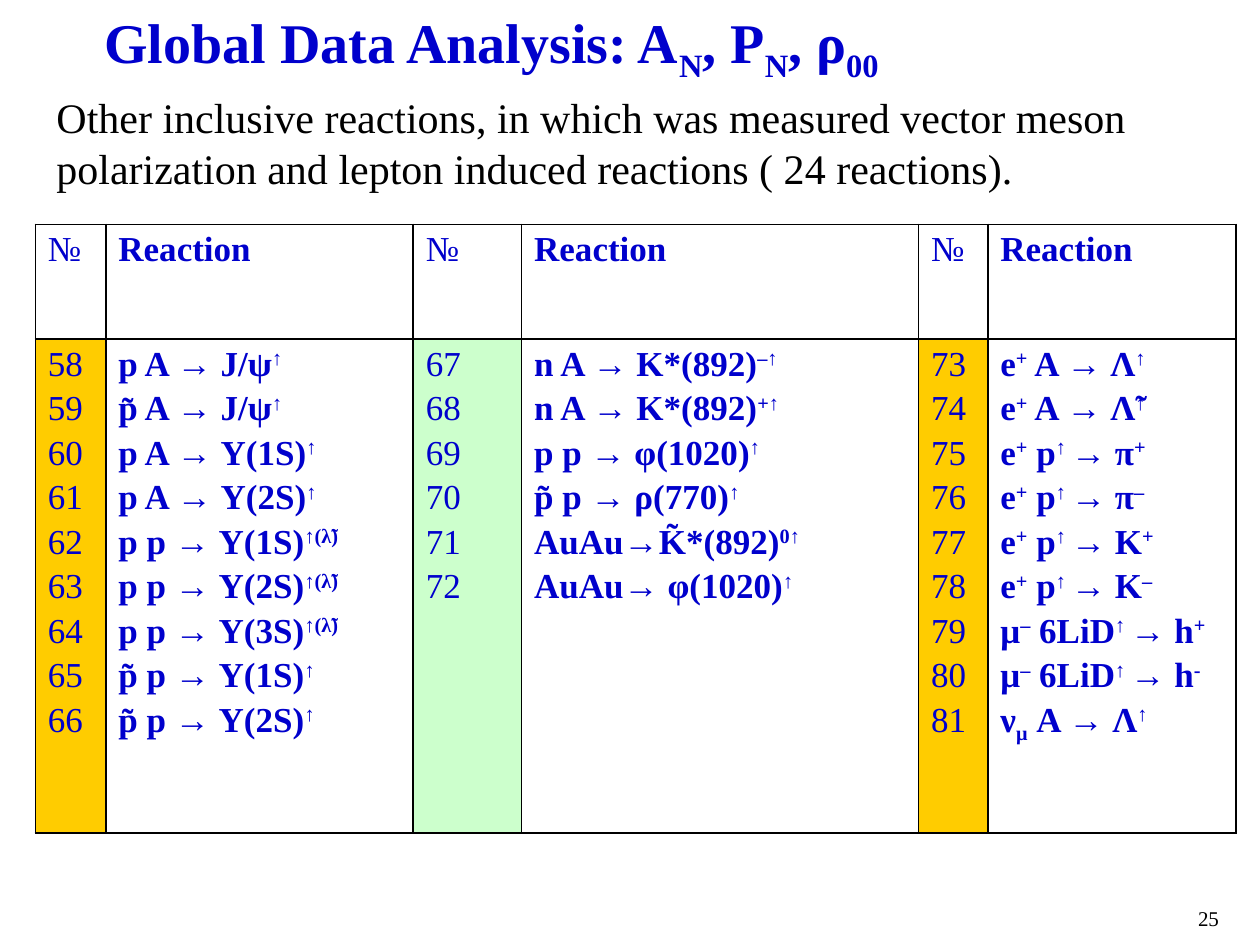
from dataclasses import dataclass
from typing import Any

from lxml.etree import SubElement
from pptx import Presentation
from pptx.dml.color import RGBColor
from pptx.enum.text import MSO_ANCHOR as Anchor
from pptx.oxml.ns import qn
from pptx.util import Inches, Pt

BLUE, BLACK, WHITE = "0000CC", "000000", "FFFFFF"
GOLD, MINT = "FFCC00", "CCFFCC"
SHIFTS = {"^": "30000", "_": "-25000"}


def color(code):
    return RGBColor.from_string(code)


@dataclass
class SlideBuilder:
    """Draws on a page with a grid of 100 columns by 75 rows; |^ raises and |_ lowers a span."""

    page: Any
    unit: int
    face: str = "Times New Roman"

    def length(self, units):
        return round(units * self.unit)

    def style(self, font, size, ink, bold):
        font.name, font.size, font.bold = self.face, Pt(size), bold
        font.color.rgb = color(ink)

    def lines(self, frame, lines, size, ink, bold=False, gap=0):
        for index, line in enumerate(lines):
            para = frame.add_paragraph() if index else frame.paragraphs[0]
            para.space_before = Pt(gap)
            self.style(para.font, size, ink, bold)
            for piece in line.split("|"):
                shift = SHIFTS.get(piece[:1])
                span = para.add_run()
                span.text = piece[1:] if shift else piece
                if shift:
                    span.font._element.set("baseline", shift)

    def text(self, place, line, size, ink=BLACK, bold=False, anchor=Anchor.TOP, fill=None):
        box = self.page.shapes.add_textbox(*map(self.length, place))
        if fill:
            box.fill.solid()
            box.fill.fore_color.rgb = color(fill)
        frame = box.text_frame
        frame.word_wrap, frame.vertical_anchor = True, anchor
        self.lines(frame, [line], size, ink, bold)

    def border(self, cell, ink=BLACK, width=1):
        properties = cell._tc.get_or_add_tcPr()
        for side in ("a:lnL", "a:lnR", "a:lnT", "a:lnB"):
            line = SubElement(properties, qn(side), w=str(Pt(width)))
            SubElement(SubElement(line, qn("a:solidFill")), qn("a:srgbClr"), val=ink)

    def table(self, left, top, widths, heights, rows, fills, size=20, gap=3.2):
        place = map(self.length, (left, top, sum(widths), sum(heights)))
        table = self.page.shapes.add_table(len(heights), len(widths), *place).table
        table.first_row = table.horz_banding = False
        for column, width in zip(table.columns, widths):
            column.width = self.length(width)
        for r, (height, row) in enumerate(zip(heights, rows)):
            table.rows[r].height = self.length(height)
            for c, lines in enumerate(row):
                cell = table.cell(r, c)
                self.border(cell)
                if r and fills[c]:
                    cell.fill.solid()
                    cell.fill.fore_color.rgb = color(fills[c])
                else:
                    cell.fill.background()
                self.lines(cell.text_frame, lines, size, BLUE, bold=c % 2 == 1, gap=gap)


REACTIONS = [
    (58, [
        "p A → J/ψ|^↑",
        "p̃ A → J/ψ|^↑",
        "p A → Ү(1S)|^↑",
        "p A → Ү(2S)|^↑",
        "p p → Ү(1S)|^↑(λ̃)",
        "p p → Ү(2S)|^↑(λ̃)",
        "p p → Ү(3S)|^↑(λ̃)",
        "p̃ p → Ү(1S)|^↑",
        "p̃ p → Ү(2S)|^↑",
    ]),
    (67, [
        "n A → K*(892)|^–↑",
        "n A → K*(892)|^+↑",
        "p p → φ(1020)|^↑",
        "p̃ p → ρ(770)|^↑",
        "AuAu→K̃*(892)|^0↑",
        "AuAu→ φ(1020)|^↑",
    ]),
    (73, [
        "e|^+| A → Λ|^↑",
        "e|^+| A → Λ̃|^↑",
        *[f"e|^+| p|^↑ |→ {hadron}" for hadron in ("π|^+", "π|^–", "K|^+", "K|^–")],
        *[f"μ|^–| 6LiD|^↑ |→ h|^{sign}" for sign in "+-"],
        "ν|_μ| A → Λ|^↑",
    ]),
]


def main():
    deck = Presentation()
    deck.slide_width, deck.slide_height = Inches(10), Inches(7.5)
    page = deck.slides.add_slide(deck.slide_layouts[6])
    builder = SlideBuilder(page, deck.slide_width // 100)

    builder.text((7.3, 0.5, 83.7, 6.7), "Global Data Analysis: A|_N|, P|_N|, ρ|_00", 32,
                 BLUE, bold=True, anchor=Anchor.BOTTOM, fill=WHITE)
    builder.text((3.5, 6.8, 91.3, 9.1),
                 "Other inclusive reactions, in which was measured vector meson "
                 "polarization and lepton induced reactions ( 24 reactions).", 24)

    header = [["№"], ["Reaction"]] * len(REACTIONS)
    body = []
    for first, reactions in REACTIONS:
        numbers = [str(first + index) for index in range(len(reactions))]
        body += [numbers, reactions]
    builder.table(2.8, 17.8, [5.6, 24.4, 8.6, 31.5, 5.5, 19.7], [9.1, 39.2],
                  [header, body], [GOLD, None, MINT, None, GOLD, None])

    builder.text((94.1, 71.4, 5.9, 3), "25", 12)
    deck.save("out.pptx")


if __name__ == "__main__":
    main()
